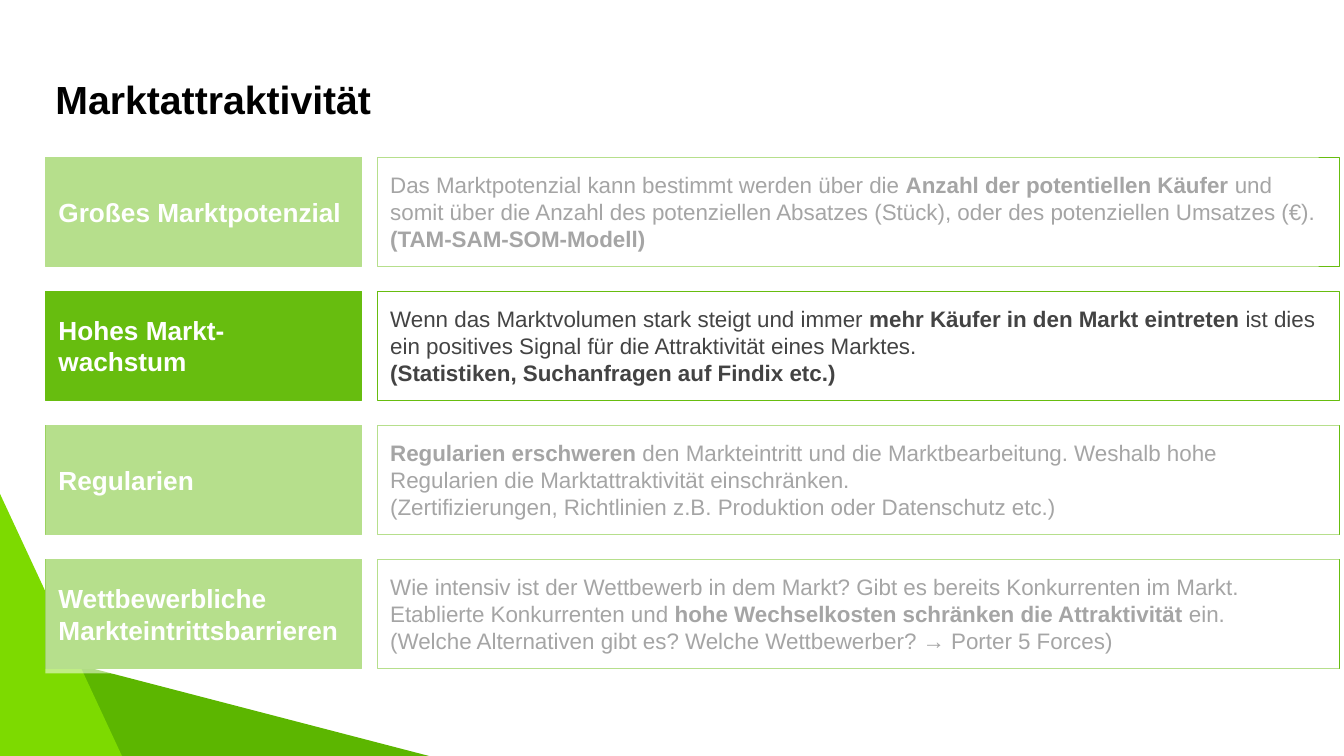
from dataclasses import dataclass

from lxml import etree
from pptx import Presentation
from pptx.dml.color import RGBColor
from pptx.enum.shapes import MSO_SHAPE
from pptx.enum.text import MSO_ANCHOR, PP_ALIGN
from pptx.oxml.ns import qn
from pptx.util import Inches, Pt

RECTANGLE = MSO_SHAPE.RECTANGLE
TRIANGLE = MSO_SHAPE.ISOSCELES_TRIANGLE
LEFT = PP_ALIGN.LEFT
TOP = MSO_ANCHOR.TOP
MIDDLE = MSO_ANCHOR.MIDDLE


@dataclass(frozen=True)
class Theme:
    """Colours, font and type sizes of the slide."""
    font: str = "Arial"
    title: str = "000000"
    body: str = "434343"
    white: str = "FFFFFF"
    green: str = "67BD0F"
    dark_green: str = "5CB600"
    light_green: str = "7DDA00"
    title_size: float = 28
    label_size: float = 18.7
    body_size: float = 16


THEME = Theme()
ROW_TOP, ROW_PITCH, ROW_HEIGHT = 1.56, 1.33, 1.08
LABEL_LEFT, LABEL_WIDTH = 0.45, 3.14
DETAIL_LEFT, DETAIL_WIDTH = 3.74, 9.55
VEIL_OPACITY = 52

CRITERIA = [
    ("Großes Marktpotenzial", [
        [("Das Marktpotenzial kann bestimmt werden über die ", False),
         ("Anzahl der potentiellen Käufer", True),
         (" und somit über die Anzahl des potenziellen Absatzes (Stück), "
          "oder des potenziellen Umsatzes (€).", False)],
        [("(TAM-SAM-SOM-Modell)", True)],
    ]),
    ("Hohes Markt- wachstum", [
        [("Wenn das Marktvolumen stark steigt und immer ", False),
         ("mehr Käufer in den Markt eintreten", True),
         (" ist dies ein positives Signal für die Attraktivität eines Marktes.", False)],
        [("(Statistiken, Suchanfragen auf Findix etc.)", True)],
    ]),
    ("Regularien", [
        [("Regularien erschweren", True),
         (" den Markteintritt und die Marktbearbeitung. Weshalb hohe Regularien "
          "die Marktattraktivität einschränken.", False)],
        [("(Zertifizierungen, Richtlinien z.B. Produktion oder Datenschutz etc.)", False)],
    ]),
    ("Wettbewerbliche Markteintrittsbarrieren", [
        [("Wie intensiv ist der Wettbewerb in dem Markt? Gibt es bereits Konkurrenten "
          "im Markt. Etablierte Konkurrenten und ", False),
         ("hohe Wechselkosten schränken die Attraktivität", True),
         (" ein.", False)],
        [("(Welche Alternativen gibt es? Welche Wettbewerber? → Porter 5 Forces)", False)],
    ]),
]


def add_filled_shape(slide, kind, left, top, width, height, fill):
    """Add a preset shape with a plain fill, no line and no shadow."""
    shape = slide.shapes.add_shape(
        kind, Inches(left), Inches(top), Inches(width), Inches(height))
    shape.shadow.inherit = False
    shape.fill.solid()
    shape.fill.fore_color.rgb = RGBColor.from_string(fill)
    shape.line.fill.background()
    return shape


def set_margins(text_frame, margin):
    """Give all four sides of a text frame the same margin."""
    text_frame.margin_left = text_frame.margin_right = Inches(margin)
    text_frame.margin_top = text_frame.margin_bottom = Inches(margin)


def format_run(run, size, color, bold):
    """Set the font of a run."""
    run.font.name = THEME.font
    run.font.size = Pt(size)
    run.font.bold = bold
    run.font.color.rgb = RGBColor.from_string(color)


def add_text_panel(slide, left, top, width, fill, paragraphs, size, color):
    """Add a green-outlined panel holding paragraphs of (text, bold) runs."""
    panel = add_filled_shape(slide, RECTANGLE, left, top, width, ROW_HEIGHT, fill)
    panel.line.color.rgb = RGBColor.from_string(THEME.green)
    panel.line.width = Pt(0.75)
    text_frame = panel.text_frame
    text_frame.word_wrap = True
    text_frame.vertical_anchor = MIDDLE
    set_margins(text_frame, 0.13)
    for index, runs in enumerate(paragraphs):
        paragraph = text_frame.add_paragraph() if index else text_frame.paragraphs[0]
        paragraph.alignment = LEFT
        for text, bold in runs:
            run = paragraph.add_run()
            run.text = text
            format_run(run, size, color, bold)


def add_criterion(slide, row, label, details):
    """Add one row with its label and its explanation."""
    top = ROW_TOP + row * ROW_PITCH
    add_text_panel(slide, LABEL_LEFT, top, LABEL_WIDTH, THEME.green,
                   [[(label, True)]], THEME.label_size, THEME.white)
    add_text_panel(slide, DETAIL_LEFT, top, DETAIL_WIDTH, THEME.white,
                   details, THEME.body_size, THEME.body)


def add_veil(slide, left, top, width, height):
    """Add a translucent white sheet that fades the rows beneath it."""
    veil = add_filled_shape(slide, RECTANGLE, left, top, width, height, THEME.white)
    color = veil.fill._xPr.find(qn("a:solidFill")).find(qn("a:srgbClr"))
    etree.SubElement(color, qn("a:alpha")).set("val", str(VEIL_OPACITY * 1000))


def set_title(slide, text):
    """Place and format the title placeholder."""
    title = slide.shapes.title
    title.left, title.top = Inches(0.45), Inches(0.65)
    title.width, title.height = Inches(12.42), Inches(0.84)
    text_frame = title.text_frame
    text_frame.text = text
    text_frame.word_wrap = True
    text_frame.vertical_anchor = TOP
    set_margins(text_frame, 0.1)
    paragraph = text_frame.paragraphs[0]
    paragraph.alignment = LEFT
    format_run(paragraph.runs[0], THEME.title_size, THEME.title, True)


def main():
    """Build the slide and save it."""
    presentation = Presentation()
    presentation.slide_width = Inches(13.33)
    presentation.slide_height = Inches(7.5)
    slide = presentation.slides.add_slide(presentation.slide_layouts[5])
    wedge = add_filled_shape(slide, TRIANGLE, 0.06, 4.74, 2.87, 5.52, THEME.dark_green)
    wedge.rotation = 90
    add_filled_shape(slide, TRIANGLE, -1.27, 4.9, 2.54, 2.73, THEME.light_green)
    set_title(slide, "Marktattraktivität")
    for row, (label, details) in enumerate(CRITERIA):
        add_criterion(slide, row, label, details)
    add_veil(slide, 0.45, 4.07, 12.83, 2.61)
    add_veil(slide, 0.25, 1.26, 12.83, 1.5)
    presentation.save("out.pptx")


if __name__ == "__main__":
    main()
